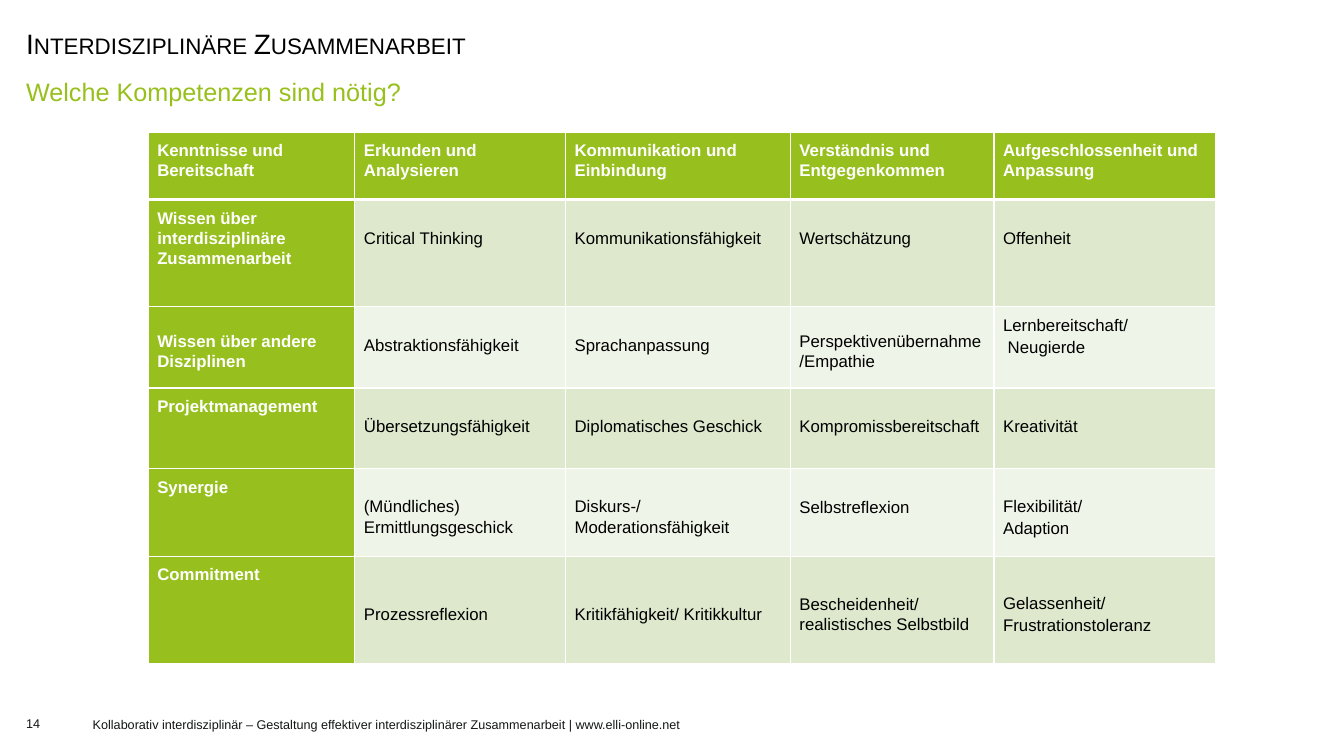
"""Build the slide on competences for interdisciplinary collaboration."""
from dataclasses import dataclass

from lxml.etree import SubElement
from pptx import Presentation
from pptx.dml.color import RGBColor as Rgb
from pptx.enum.text import MSO_ANCHOR as Anchor, MSO_AUTO_SIZE as AutoSize, PP_ALIGN as Align
from pptx.oxml.ns import qn
from pptx.util import Inches, Pt


@dataclass(frozen=True)
class Theme:
    font: str = "Arial"
    title_size: float = 20
    subtitle_size: float = 18
    table_size: float = 12
    footer_size: float = 9
    black: str = "000000"
    white: str = "FFFFFF"
    footer: str = "141616"
    subtitle: str = "98C01C"
    green: str = "97C01E"
    bands: tuple[str, str] = ("DDE8CD", "EFF4E8")
    thin: float = 1
    thick: float = 3


@dataclass(frozen=True)
class Style:
    size: float
    color: str
    bold: bool = False
    spacing: float = 1.0


@dataclass(frozen=True)
class Label:
    text: str
    box: tuple[float, float, float, float]
    style: Style
    anchor: Anchor
    inset: tuple[float, float]


@dataclass(frozen=True)
class Entry:
    """One table cell, with its lines and their vertical placement."""
    text: str
    anchor: Anchor = Anchor.TOP
    top: float = 0.08
    gap: float = 0


def lowered(text: str) -> Entry:
    """Place an entry one line below the top of its cell."""
    return Entry(text, top=0.28)


def centred(text: str, gap: float = 0) -> Entry:
    """Place an entry in the middle of its cell."""
    return Entry(text, Anchor.MIDDLE, gap=gap)


THEME = Theme()
TITLE = Style(THEME.title_size, THEME.black, spacing=1.1)
HEADING = Style(THEME.table_size, THEME.white, True, 1.07)
BODY = Style(THEME.table_size, THEME.black, spacing=1.07)
FOOTER = Style(THEME.footer_size, THEME.footer)
TITLE_BOX = (0.16, 0.22, 9.37, 0.39)
TABLE_BOX = (1.47, 1.31, 10.59, 5.28)
COLUMN_WIDTHS = (2.05, 2.09, 2.23, 2.02, 2.2)
ROW_HEIGHTS = (0.67, 1.06, 0.81, 0.8, 0.87, 1.06)
LABELS = (
    Label("Welche Kompetenzen sind nötig?", (0.16, 0.68, 13.02, 0.39),
          Style(THEME.subtitle_size, THEME.subtitle, spacing=1.1), Anchor.TOP, (0.1, 0.05)),
    Label("14", (0.26, 6.99, 0.5, 0.38), FOOTER, Anchor.MIDDLE, (0, 0)),
    Label("Kollaborativ interdisziplinär – Gestaltung effektiver interdisziplinärer "
          "Zusammenarbeit | www.elli-online.net",
          (0.92, 7, 8.43, 0.37), FOOTER, Anchor.MIDDLE, (0, 0)),
)
COMPETENCES = (
    (Entry("Kenntnisse und Bereitschaft"), Entry("Erkunden und Analysieren"),
     Entry("Kommunikation und Einbindung"), Entry("Verständnis und Entgegenkommen"),
     Entry("Aufgeschlossenheit und Anpassung")),
    (Entry("Wissen über interdisziplinäre Zusammenarbeit"), lowered("Critical Thinking"),
     lowered("Kommunikationsfähigkeit"), lowered("Wertschätzung"), lowered("Offenheit")),
    (centred("Wissen über andere Disziplinen"), lowered("Abstraktionsfähigkeit"),
     lowered("Sprachanpassung"), centred("Perspektivenübernahme/Empathie"),
     Entry("Lernbereitschaft/\n Neugierde", gap=1.4)),
    (Entry("Projektmanagement"), lowered("Übersetzungsfähigkeit"),
     lowered("Diplomatisches Geschick"), lowered("Kompromissbereitschaft"),
     lowered("Kreativität")),
    (Entry("Synergie"), centred("(Mündliches)\nErmittlungsgeschick"),
     centred("Diskurs-/Moderationsfähigkeit"), lowered("Selbstreflexion"),
     centred("Flexibilität/\nAdaption", 1.4)),
    (Entry("Commitment"), centred("Prozessreflexion"),
     centred("Kritikfähigkeit/ Kritikkultur"),
     centred("Bescheidenheit/ realistisches Selbstbild"),
     centred("Gelassenheit/\nFrustrationstoleranz", 1.5)),
)


def write(frame, text: str, style: Style, gap: float = 0) -> None:
    """Fill a text frame with one formatted run per line."""
    lines = text.split("\n")
    for index, line in enumerate(lines):
        paragraph = frame.add_paragraph() if index else frame.paragraphs[0]
        paragraph.alignment = Align.LEFT
        paragraph.line_spacing = style.spacing
        paragraph.space_before = Pt(0)
        paragraph.space_after = Pt(gap if index < len(lines) - 1 else 0)
        run = paragraph.add_run()
        run.text = line
        run.font.name = THEME.font
        run.font.size = Pt(style.size)
        run.font.bold = style.bold
        run.font.color.rgb = Rgb.from_string(style.color)


def add_title(slide) -> None:
    """Move and format the title placeholder in small capitals."""
    title = slide.shapes.title
    title.left, title.top, title.width, title.height = map(Inches, TITLE_BOX)
    frame = title.text_frame
    frame.auto_size = AutoSize.NONE
    frame.vertical_anchor = Anchor.MIDDLE
    write(frame, "Interdisziplinäre Zusammenarbeit", TITLE)
    frame.paragraphs[0].runs[0].font._element.set("cap", "small")


def add_label(slide, label: Label) -> None:
    """Add a wrapped text box."""
    frame = slide.shapes.add_textbox(*map(Inches, label.box)).text_frame
    frame.word_wrap = True
    frame.vertical_anchor = label.anchor
    frame.margin_left = frame.margin_right = Inches(label.inset[0])
    frame.margin_top = frame.margin_bottom = Inches(label.inset[1])
    write(frame, label.text, label.style)


def add_borders(cell, row: int) -> None:
    """Draw white cell borders, thick between the header and the body."""
    properties = cell._tc.get_or_add_tcPr()
    thick_side = {0: "lnB", 1: "lnT"}.get(row)
    for position, side in enumerate(("lnL", "lnR", "lnT", "lnB")):
        width = THEME.thick if side == thick_side else THEME.thin
        line = SubElement(properties, qn(f"a:{side}"), w=str(Pt(width)))
        fill = SubElement(line, qn("a:solidFill"))
        SubElement(fill, qn("a:srgbClr"), val=THEME.white)
        properties.insert(position, line)


def fill_cell(cell, entry: Entry, row: int, column: int) -> None:
    """Write and format one table cell."""
    is_heading = row == 0 or column == 0
    cell.margin_left, cell.margin_right = Inches(0.09), Inches(0.08)
    cell.margin_top, cell.margin_bottom = Inches(entry.top), Inches(0)
    cell.vertical_anchor = entry.anchor
    cell.fill.solid()
    color = THEME.green if is_heading else THEME.bands[(row - 1) % 2]
    cell.fill.fore_color.rgb = Rgb.from_string(color)
    add_borders(cell, row)
    write(cell.text_frame, entry.text, HEADING if is_heading else BODY, entry.gap)


def add_competences(slide) -> None:
    """Add the table of competences."""
    table = slide.shapes.add_table(
        len(ROW_HEIGHTS), len(COLUMN_WIDTHS), *map(Inches, TABLE_BOX)).table
    table.first_col = True
    for column, width in zip(table.columns, COLUMN_WIDTHS):
        column.width = Inches(width)
    for row, height in zip(table.rows, ROW_HEIGHTS):
        row.height = Inches(height)
    for row, entries in enumerate(COMPETENCES):
        for column, entry in enumerate(entries):
            fill_cell(table.cell(row, column), entry, row, column)


def main() -> None:
    """Build and save the presentation."""
    deck = Presentation()
    deck.slide_width, deck.slide_height = Inches(13.33), Inches(7.5)
    slide = deck.slides.add_slide(deck.slide_layouts[5])
    add_title(slide)
    for label in LABELS:
        add_label(slide, label)
    add_competences(slide)
    deck.save("out.pptx")


if __name__ == "__main__":
    main()
